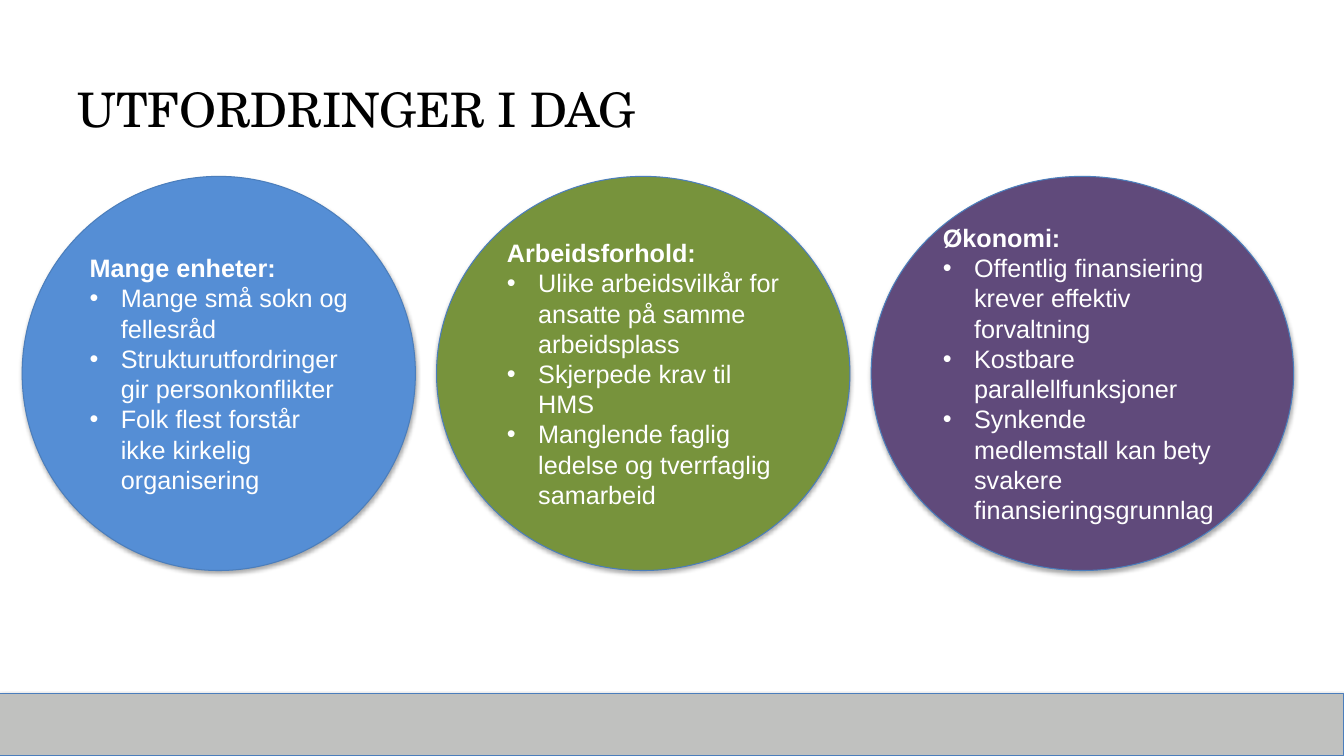
from pptx import Presentation
from pptx.dml.color import RGBColor
from pptx.enum.shapes import MSO_SHAPE
from pptx.enum.text import MSO_ANCHOR, PP_ALIGN
from pptx.oxml import parse_xml
from pptx.oxml.ns import nsdecls, qn
from pptx.util import Inches, Pt

COLORS = {
    "black": "000000", "white": "FFFFFF", "edge": "4B7EBC", "bar": "C0C1BF",
    "blue": "558ED5", "green": "77933C", "purple": "604A7B",
}
WIDTH, HEIGHT = 13.33, 7.5
BAR = 0.62
LEFT, TOP, GAP, TALL = 0.22, 1.75, 0.21, 3.91
INDENT = Inches(0.31)

deck = Presentation()
deck.slide_width, deck.slide_height = Inches(WIDTH), Inches(HEIGHT)
slide = deck.slides.add_slide(deck.slide_layouts[6])


def add_block(kind, x, y, w, h, fill):
    """Add a filled shape with a thin edge and a soft shadow below it."""
    shape = slide.shapes.add_shape(kind, Inches(x), Inches(y), Inches(w), Inches(h))
    shape.fill.solid()
    shape.fill.fore_color.rgb = RGBColor.from_string(COLORS[fill])
    shape.line.color.rgb = RGBColor.from_string(COLORS["edge"])
    shape.line.width = Pt(0.75)
    shape.shadow.inherit = False
    shape._element.spPr.find(qn("a:effectLst")).append(parse_xml(
        f'<a:outerShdw {nsdecls("a")} blurRad="{Pt(3.1)}" dist="{Pt(1.8)}" '
        f'dir="5400000" rotWithShape="0"><a:srgbClr val="{COLORS["black"]}">'
        '<a:alpha val="35000"/></a:srgbClr></a:outerShdw>'))
    return shape


def write(frame, text, size=18, font="Arial", color="white", bold=False, bullet=False):
    """Write one paragraph, using the empty first one if it is free."""
    para = frame.paragraphs[0] if not frame.text else frame.add_paragraph()
    para.alignment = PP_ALIGN.LEFT
    if bullet:
        props = para._p.get_or_add_pPr()
        props.set("marL", str(INDENT))
        props.set("indent", str(-INDENT))
        props.append(parse_xml(f'<a:buFont {nsdecls("a")} typeface="Arial"/>'))
        props.append(parse_xml(f'<a:buChar {nsdecls("a")} char="•"/>'))
    run = para.add_run()
    run.text = text
    run.font.size, run.font.name, run.font.bold = Pt(size), font, bold
    run.font.color.rgb = RGBColor.from_string(COLORS[color])


# Footer bar
add_block(MSO_SHAPE.RECTANGLE, 0, HEIGHT - BAR, WIDTH, BAR, "bar")

# Title
title = slide.shapes.add_textbox(Inches(0.67), Inches(0.74), Inches(12), Inches(1.02))
title.text_frame.word_wrap = True
write(title.text_frame, "UTFORDRINGER I DAG", size=34, font="TeX Gyre Schola", color="black")

# Three circles, left to right
circles = [
    (3.9, "blue", "Mange enheter:", [
        "Mange små sokn og fellesråd",
        "Strukturutfordringer gir personkonflikter",
        "Folk flest forstår ikke kirkelig organisering"]),
    (4.1, "green", "Arbeidsforhold:", [
        "Ulike arbeidsvilkår for ansatte på samme arbeidsplass",
        "Skjerpede krav til HMS",
        "Manglende faglig ledelse og tverrfaglig samarbeid"]),
    (4.19, "purple", "Økonomi:", [
        "Offentlig finansiering krever effektiv forvaltning",
        "Kostbare parallellfunksjoner",
        "Synkende medlemstall kan bety svakere finansieringsgrunnlag"]),
]
x = LEFT
for wide, fill, head, points in circles:
    frame = add_block(MSO_SHAPE.OVAL, x, TOP, wide, TALL, fill).text_frame
    frame.word_wrap = True
    frame.vertical_anchor = MSO_ANCHOR.MIDDLE
    write(frame, head, bold=True)
    for point in points:
        write(frame, point, bullet=True)
    x += wide + GAP

deck.save("out.pptx")
